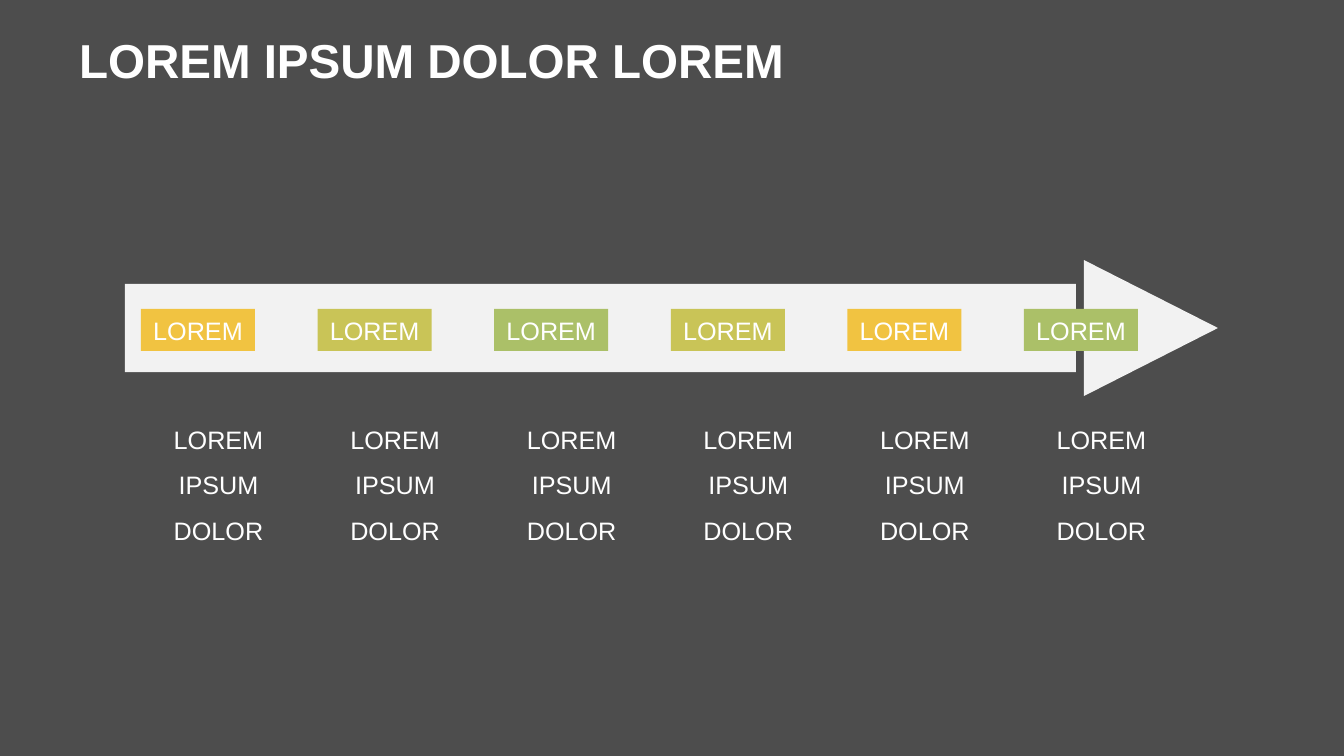
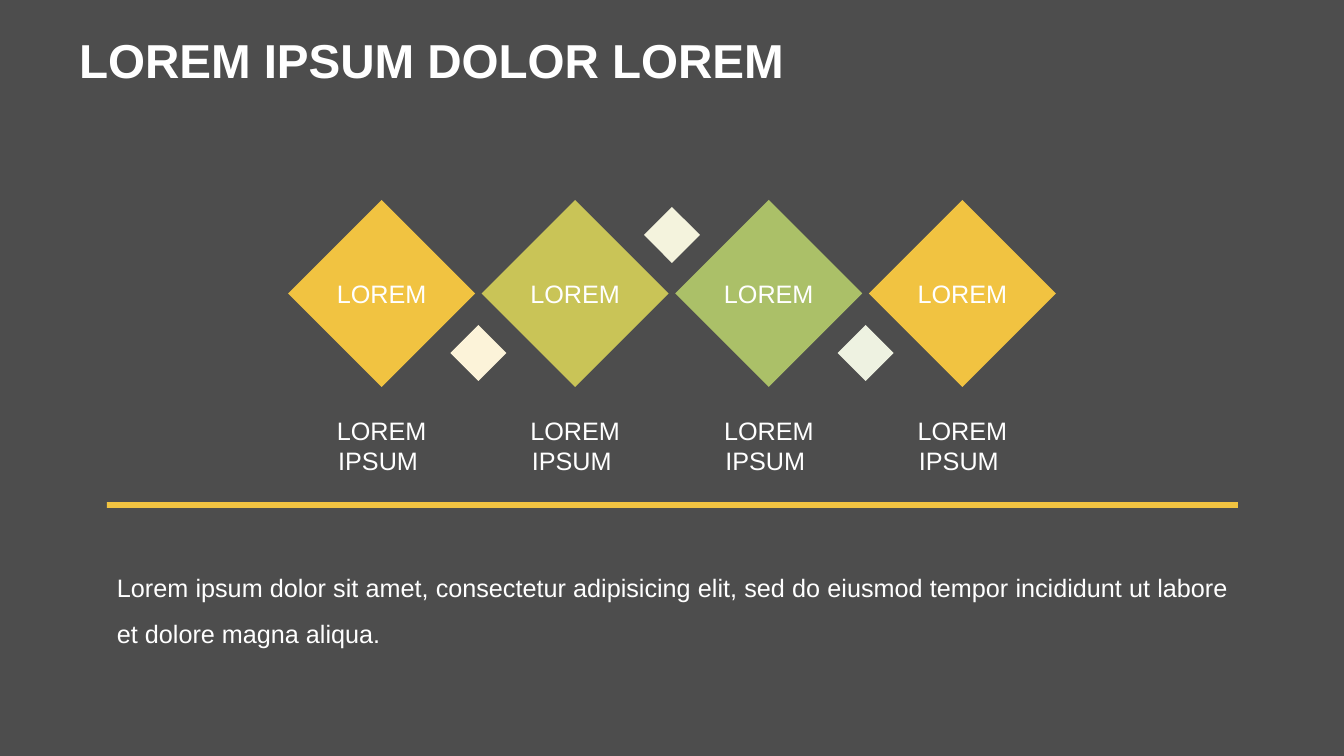
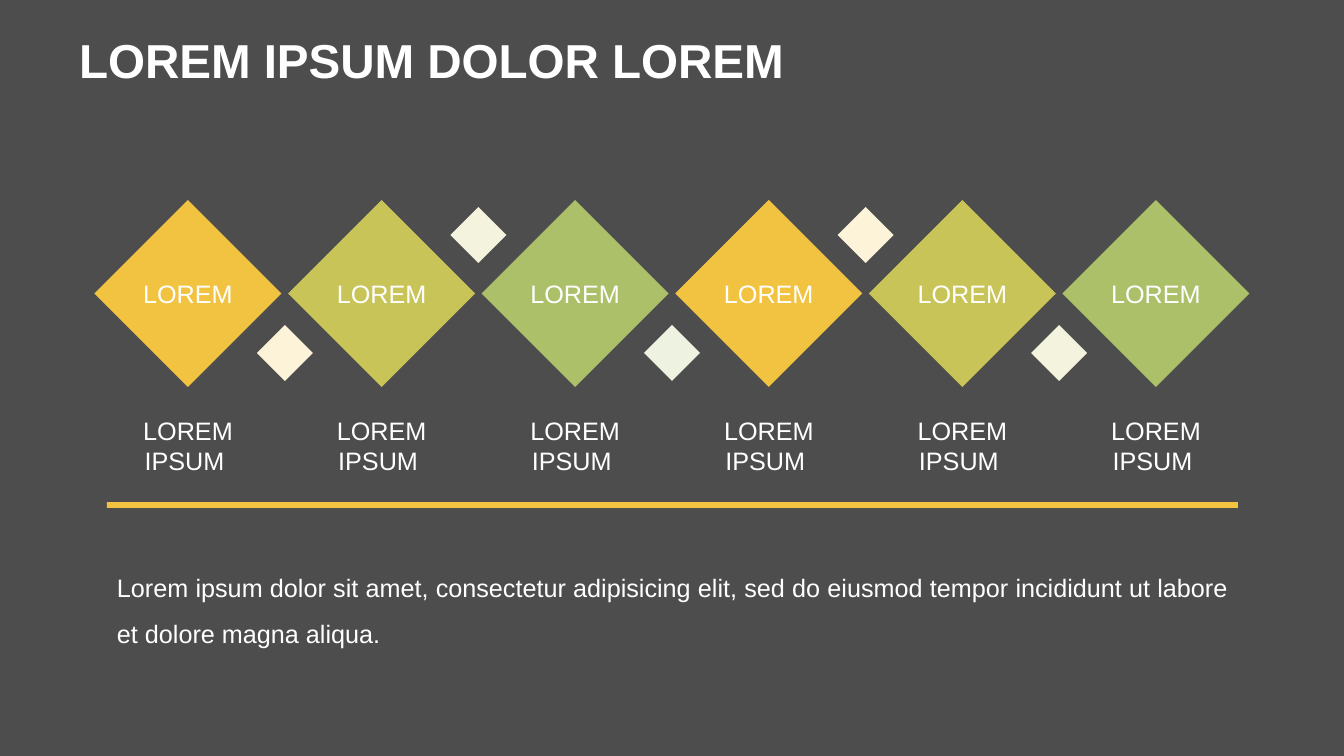
"""Builds three dark infographic slides: an arrow timeline and two diamond chains."""
from itertools import cycle

from pptx import Presentation
from pptx.dml.color import RGBColor
from pptx.enum.shapes import MSO_SHAPE
from pptx.enum.text import MSO_ANCHOR, MSO_AUTO_SIZE, PP_ALIGN
from pptx.util import Emu, Pt

RECTANGLE = MSO_SHAPE.RECTANGLE
DIAMOND = MSO_SHAPE.DIAMOND
TOP = MSO_ANCHOR.TOP
MIDDLE = MSO_ANCHOR.MIDDLE
LEFT = PP_ALIGN.LEFT
CENTER = PP_ALIGN.CENTER
JUSTIFY = PP_ALIGN.JUSTIFY
NO_AUTOFIT = MSO_AUTO_SIZE.NONE

BACKDROP = RGBColor(0x4D, 0x4D, 0x4D)
WHITE = RGBColor(0xFF, 0xFF, 0xFF)
ARROW_GREY = RGBColor(0xF2, 0xF2, 0xF2)
YELLOW = RGBColor(0xF1, 0xC3, 0x41)
LIME = RGBColor(0xC9, 0xC4, 0x57)
GREEN = RGBColor(0xAB, 0xC0, 0x68)
PALE_YELLOW = RGBColor(0xFC, 0xF3, 0xD9)
PALE_LIME = RGBColor(0xF4, 0xF3, 0xDD)
PALE_GREEN = RGBColor(0xEE, 0xF2, 0xE1)

FONT = "Arial"
EMU_PER_PX = 914400 / 100.8
SLIDE_WIDTH, SLIDE_HEIGHT = 1344, 756
TITLE = "LOREM IPSUM DOLOR LOREM"
BODY = ("Lorem ipsum dolor sit amet, consectetur adipisicing elit, sed do eiusmod "
        "tempor incididunt ut labore et dolore magna aliqua. ")

TAG_COLOURS = (YELLOW, LIME, GREEN, LIME, YELLOW, GREEN)
TAG_LEFT, TAG_PITCH = 141, 176.6
CHAIN_COLOURS = (YELLOW, LIME, GREEN)
LINK_COLOURS = (PALE_YELLOW, PALE_LIME, PALE_GREEN)
LINK_TOPS = (325, 207)
CHAIN_PITCH = 193.6
DIAMOND_SIZE, LINK_SIZE, LABEL_WIDTH = 187, 56, 178


def px(length):
    """Turn pixels into EMU."""
    return Emu(round(length * EMU_PER_PX))


def box(left, top, width, height):
    """Turn a pixel rectangle into EMU."""
    return [px(length) for length in (left, top, width, height)]


def write(frame, text, size=18, bold=False, align=CENTER, anchor=MIDDLE, spacing=1.0):
    """Put one white paragraph into a text frame."""
    frame.word_wrap = True
    frame.auto_size = NO_AUTOFIT
    frame.vertical_anchor = anchor
    paragraph = frame.paragraphs[0]
    paragraph.alignment = align
    paragraph.line_spacing = spacing
    run = paragraph.add_run()
    run.text = text
    run.font.name = FONT
    run.font.size = Pt(size)
    run.font.bold = bold
    run.font.color.rgb = WHITE


def clear_margins(frame):
    """Remove the insets of a text frame."""
    frame.margin_left = frame.margin_right = frame.margin_top = frame.margin_bottom = 0


def paint(shape, colour):
    """Give a shape a flat fill without outline or shadow."""
    shape.shadow.inherit = False
    shape.fill.solid()
    shape.fill.fore_color.rgb = colour
    shape.line.fill.background()


def add_block(slide, preset, area, colour, text=None):
    """Add a flat preset shape with an optional centred caption."""
    block = slide.shapes.add_shape(preset, *box(*area))
    paint(block, colour)
    if text:
        clear_margins(block.text_frame)
        write(block.text_frame, text)


def add_text(slide, area, text, inset=True, **style):
    """Add a wrapped text box."""
    frame = slide.shapes.add_textbox(*box(*area)).text_frame
    if not inset:
        clear_margins(frame)
    write(frame, text, **style)


def add_titled_slide(deck):
    """Add a title-only slide with the shared heading."""
    slide = deck.slides.add_slide(deck.slide_layouts[5])
    title = slide.shapes.title
    title.left, title.top, title.width, title.height = box(69, 19, 1208, 88)
    write(title.text_frame, TITLE, size=34, bold=True, align=LEFT, spacing=0.9)
    return slide


def add_split_arrow(slide):
    """Draw the arrow whose head stands apart from its shaft."""
    outline = slide.shapes.build_freeform(125, 284, scale=EMU_PER_PX)
    outline.add_line_segments([(1076, 284), (1076, 372), (125, 372)], close=True)
    outline.move_to(1084, 260)
    outline.add_line_segments([(1218, 328), (1084, 396)], close=True)
    paint(outline.convert_to_shape(), ARROW_GREY)


def add_timeline_slide(deck):
    """Add the arrow with its tags and the columns below."""
    slide = add_titled_slide(deck)
    add_split_arrow(slide)
    for step, colour in enumerate(TAG_COLOURS):
        left = TAG_LEFT + step * TAG_PITCH
        add_block(slide, RECTANGLE, (left, 309, 114, 42), colour, "LOREM")
        add_text(slide, (left, 409, 155, 168), "LOREM IPSUM DOLOR",
                 inset=False, anchor=TOP, spacing=1.5)


def add_chain_slide(deck, count):
    """Add a centred chain of diamonds, its links, a rule and body text."""
    slide = add_titled_slide(deck)
    first = (SLIDE_WIDTH - (count - 1) * CHAIN_PITCH) / 2
    centres = [first + step * CHAIN_PITCH for step in range(count)]
    for centre, colour in zip(centres, cycle(CHAIN_COLOURS)):
        add_block(slide, DIAMOND,
                  (centre - DIAMOND_SIZE / 2, 200, DIAMOND_SIZE, DIAMOND_SIZE),
                  colour, "LOREM")
        add_text(slide, (centre - LABEL_WIDTH / 2, 410, LABEL_WIDTH, 90),
                 "LOREM IPSUM ", anchor=TOP)
    for centre, top, colour in zip(centres[:-1], cycle(LINK_TOPS), cycle(LINK_COLOURS)):
        add_block(slide, DIAMOND,
                  (centre + (CHAIN_PITCH - LINK_SIZE) / 2, top, LINK_SIZE, LINK_SIZE),
                  colour)
    add_block(slide, RECTANGLE, (107, 502, 1131, 6), YELLOW)
    add_text(slide, (107, 535, 1131, 136), BODY, align=JUSTIFY, spacing=1.5)


def main():
    """Build and save the deck."""
    deck = Presentation()
    deck.slide_width, deck.slide_height = px(SLIDE_WIDTH), px(SLIDE_HEIGHT)
    backdrop = deck.slide_master.background.fill
    backdrop.solid()
    backdrop.fore_color.rgb = BACKDROP
    add_timeline_slide(deck)
    add_chain_slide(deck, 4)
    add_chain_slide(deck, 6)
    deck.save("out.pptx")


if __name__ == "__main__":
    main()
